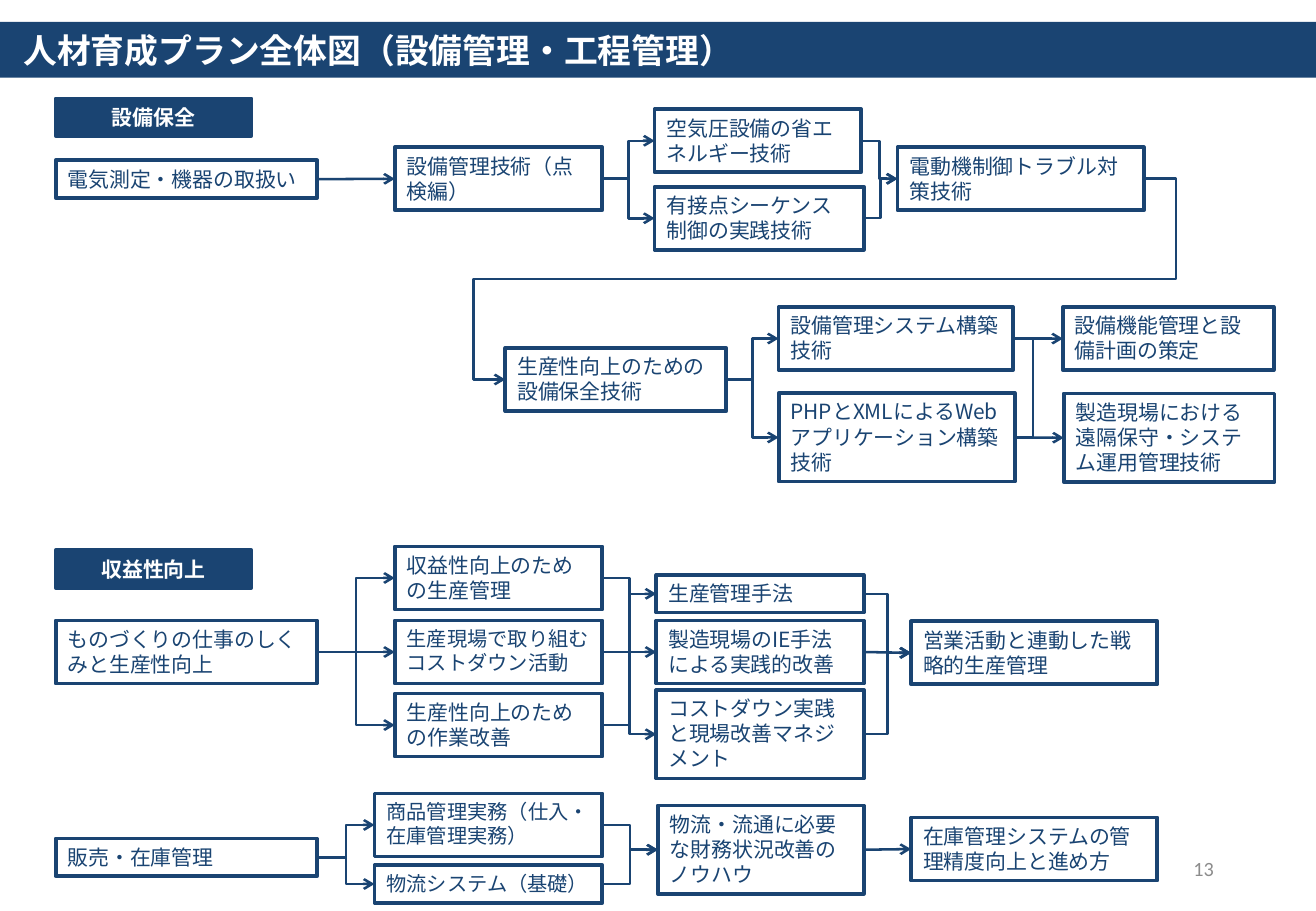
"""Build the training plan overview slide for equipment and process management."""
from dataclasses import dataclass

from lxml import etree
from pptx import Presentation
from pptx.dml.color import RGBColor
from pptx.enum.lang import MSO_LANGUAGE_ID
from pptx.enum.shapes import MSO_CONNECTOR, MSO_SHAPE
from pptx.enum.text import MSO_ANCHOR, MSO_AUTO_SIZE, PP_ALIGN
from pptx.oxml.ns import qn
from pptx.shapes.autoshape import Shape
from pptx.slide import Slide
from pptx.util import Pt

RECTANGLE = MSO_SHAPE.RECTANGLE
STRAIGHT, ELBOW = MSO_CONNECTOR.STRAIGHT, MSO_CONNECTOR.ELBOW
LEFT, CENTER, RIGHT = PP_ALIGN.LEFT, PP_ALIGN.CENTER, PP_ALIGN.RIGHT
TOP, MIDDLE = MSO_ANCHOR.TOP, MSO_ANCHOR.MIDDLE
FIT_SHAPE = MSO_AUTO_SIZE.SHAPE_TO_FIT_TEXT
JAPANESE = MSO_LANGUAGE_ID.JAPANESE

NAVY, WHITE, GRAY = "1A4472", "FFFFFF", "8C8C8C"
JAPANESE_FONT, NUMBER_FONT = "Noto Sans CJK JP", "Calibri"
LEFT_SITE, RIGHT_SITE = 1, 3
LINE_HEIGHT, PADDING = 15.1, 7.2


@dataclass(frozen=True)
class Box:
    """A course box placed by its left edge and vertical centre."""
    text: str
    left: float
    middle: float
    width: float
    lines: int = 2
    size: float = 12.4
    heading: bool = False


@dataclass(frozen=True)
class Link:
    """A connector from the right side of one box to another box."""
    source: str
    target: str
    target_site: int = LEFT_SITE
    arrow: bool = True
    adjustments: tuple[float, ...] = ()


BOXES = {
    "maintenance": Box("設備保全", 33, 69.5, 116, 1, heading=True),
    "profitability": Box("収益性向上", 33, 337.3, 116, 1, heading=True),
    "measuring": Box("電気測定・機器の取扱い", 33, 106.2, 155, 1),
    "inspection": Box("設備管理技術（点検編）", 234, 106, 123),
    "pneumatics": Box("空気圧設備の省エネルギー技術", 388, 83.5, 122.5),
    "relays": Box("有接点シーケンス制御の実践技術", 388, 129.4, 124),
    "motors": Box("電動機制御トラブル対策技術", 532, 106, 146),
    "upkeep": Box("生産性向上のための設備保全技術", 299.5, 225, 131),
    "systems": Box("設備管理システム構築技術", 461.5, 200.7, 139),
    "web": Box("PHPとXMLによるWebアプリケーション構築技術", 461.5, 259.3, 140, 3),
    "planning": Box("設備機能管理と設備計画の策定", 630, 200.7, 125),
    "remote": Box("製造現場における遠隔保守・システム運用管理技術", 630.5, 259.5, 125, 3),
    "basics": Box("ものづくりの仕事のしくみと生産性向上", 33, 386.5, 155),
    "production": Box("収益性向上のための生産管理", 234, 342.6, 123),
    "savings": Box("生産現場で取り組むコストダウン活動", 234, 386.5, 123, size=12),
    "work": Box("生産性向上のための作業改善", 234, 429.8, 123),
    "methods": Box("生産管理手法", 389, 352, 123, 1),
    "engineering": Box("製造現場のIE手法による実践的改善", 389, 386.5, 123),
    "management": Box("コストダウン実践と現場改善マネジメント", 389, 435.2, 123, 3),
    "strategy": Box("営業活動と連動した戦略的生産管理", 540, 387, 146),
    "sales": Box("販売・在庫管理", 33, 508.2, 155, 1),
    "goods": Box("商品管理実務（仕入・在庫管理実務）", 222, 489, 135, size=12),
    "logistics": Box("物流システム（基礎）", 222, 524, 135, 1, 12),
    "finance": Box("物流・流通に必要な財務状況改善のノウハウ", 390, 503.7, 122, 3),
    "inventory": Box("在庫管理システムの管理精度向上と進め方", 540, 503.3, 146),
}

LINKS = [
    Link("measuring", "inspection"),
    Link("inspection", "pneumatics"),
    Link("inspection", "relays"),
    Link("pneumatics", "motors"),
    Link("relays", "motors"),
    Link("motors", "upkeep", adjustments=(-0.05, 0.5, 1.05)),
    Link("upkeep", "systems"),
    Link("upkeep", "web"),
    Link("systems", "web", RIGHT_SITE, False, (12,)),
    Link("systems", "planning"),
    Link("web", "remote"),
    Link("basics", "production"),
    Link("basics", "savings"),
    Link("basics", "work"),
    Link("production", "management"),
    Link("savings", "engineering"),
    Link("work", "methods"),
    Link("methods", "strategy"),
    Link("engineering", "strategy"),
    Link("management", "strategy"),
    Link("sales", "goods"),
    Link("sales", "logistics"),
    Link("goods", "finance"),
    Link("logistics", "finance"),
    Link("finance", "inventory"),
]


def color(value: str) -> RGBColor:
    """Turn a hex string into a colour."""
    return RGBColor.from_string(value)


def write(shape: Shape, text: str, size: float, ink: str, align: PP_ALIGN = LEFT,
          anchor: MSO_ANCHOR = TOP, bold: bool = False,
          font_name: str = JAPANESE_FONT) -> None:
    """Put one formatted run into a shape."""
    frame = shape.text_frame
    frame.word_wrap = True
    frame.vertical_anchor = anchor
    paragraph = frame.paragraphs[0]
    paragraph.alignment = align
    run = paragraph.add_run()
    run.text = text
    font = run.font
    font.size, font.bold, font.name = Pt(size), bold, font_name
    font.language_id = JAPANESE
    font.color.rgb = color(ink)
    properties = run.font._element
    etree.SubElement(properties, qn("a:ea")).set("typeface", font_name)


def add_rectangle(slide: Slide, left: float, top: float,
                  width: float, height: float, filled: bool) -> Shape:
    """Add a plain rectangle without shadow."""
    shape = slide.shapes.add_shape(RECTANGLE, Pt(left), Pt(top), Pt(width), Pt(height))
    shape.shadow.inherit = False
    if filled:
        shape.fill.solid()
        shape.fill.fore_color.rgb = color(NAVY)
    else:
        shape.fill.background()
    return shape


def add_box(slide: Slide, box: Box) -> Shape:
    """Draw a course or heading box."""
    height = PADDING + LINE_HEIGHT * box.lines
    shape = add_rectangle(slide, box.left, box.middle - height / 2,
                          box.width, height, box.heading)
    shape.line.color.rgb = color(NAVY)
    shape.line.width = Pt(2.25)
    write(shape, box.text, box.size, WHITE if box.heading else NAVY,
          CENTER if box.heading else LEFT, bold=box.heading)
    shape.text_frame.auto_size = FIT_SHAPE
    return shape


def add_link(slide: Slide, link: Link, shapes: dict[str, Shape]) -> None:
    """Connect two boxes, straight when they share a row."""
    level = abs(BOXES[link.source].middle - BOXES[link.target].middle) < 1
    connector = slide.shapes.add_connector(STRAIGHT if level else ELBOW, 0, 0, 0, 0)
    connector.begin_connect(shapes[link.source], RIGHT_SITE)
    connector.end_connect(shapes[link.target], link.target_site)
    connector.line.color.rgb = color(NAVY)
    connector.line.width = Pt(1.5)
    properties = connector.element.spPr
    etree.SubElement(properties, qn("a:effectLst"))
    if link.arrow:
        line = properties.find(qn("a:ln"))
        etree.SubElement(line, qn("a:tailEnd")).set("type", "arrow")
    if link.adjustments:
        geometry = properties.find(qn("a:prstGeom"))
        geometry.set("prst", f"bentConnector{len(link.adjustments) + 2}")
        guides = geometry.find(qn("a:avLst"))
        for number, share in enumerate(link.adjustments, 1):
            guide = etree.SubElement(guides, qn("a:gd"))
            guide.set("name", f"adj{number}")
            guide.set("fmla", f"val {round(share * 100000)}")


def main() -> None:
    """Build and save the slide."""
    presentation = Presentation()
    presentation.slide_width, presentation.slide_height = Pt(780), Pt(540)
    slide = presentation.slides.add_slide(presentation.slide_layouts[6])
    banner = add_rectangle(slide, 0, 13, 780, 33, True)
    banner.line.fill.background()
    title = slide.shapes.add_textbox(Pt(0), Pt(13.7), Pt(448.5), Pt(31.5))
    write(title, "人材育成プラン全体図（設備管理・工程管理）", 20, WHITE, CENTER, MIDDLE, True)
    shapes = {name: add_box(slide, box) for name, box in BOXES.items()}
    for link in LINKS:
        add_link(slide, link, shapes)
    page_number = slide.shapes.add_textbox(Pt(551), Pt(500.5), Pt(175.5), Pt(28.8))
    write(page_number, "13", 12, GRAY, RIGHT, MIDDLE, font_name=NUMBER_FONT)
    presentation.save("out.pptx")


if __name__ == "__main__":
    main()
